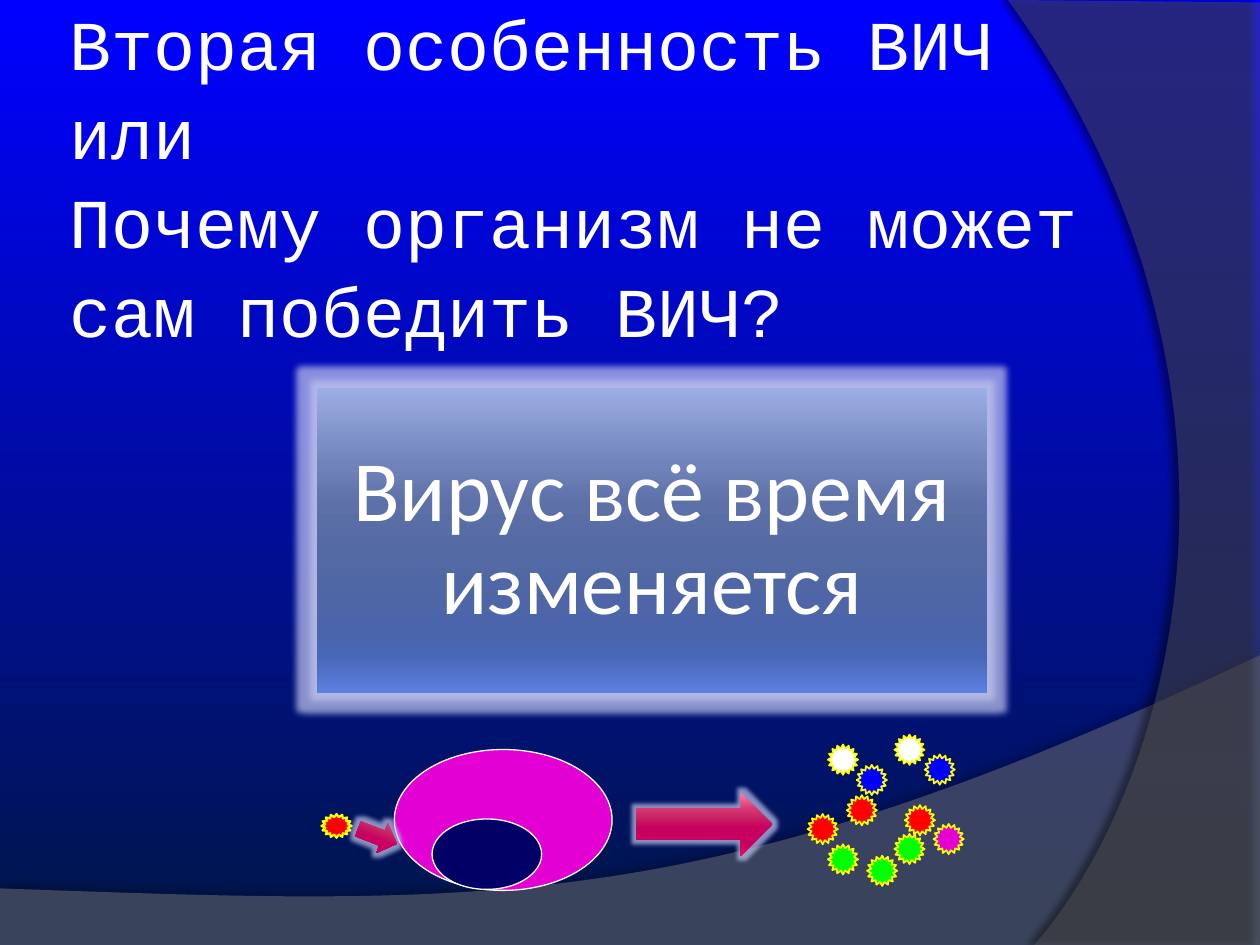
"""Build a slide on why the body cannot defeat HIV: the virus keeps changing."""
from copy import deepcopy

from lxml import etree
from pptx import Presentation
from pptx.dml.color import RGBColor
from pptx.enum.shapes import MSO_SHAPE
from pptx.enum.text import MSO_ANCHOR, MSO_AUTO_SIZE, PP_ALIGN
from pptx.oxml.ns import qn
from pptx.util import Cm, Pt

RECTANGLE, OVAL = MSO_SHAPE.RECTANGLE, MSO_SHAPE.OVAL
STAR, ARROW = MSO_SHAPE.STAR_16_POINT, MSO_SHAPE.RIGHT_ARROW
MIDDLE, NO_FIT = MSO_ANCHOR.MIDDLE, MSO_AUTO_SIZE.NONE
LEFT, CENTER = PP_ALIGN.LEFT, PP_ALIGN.CENTER

WHITE = RGBColor(0xFF, 0xFF, 0xFF)
BLACK = RGBColor(0, 0, 0)
RED = RGBColor(0xFF, 0, 0)
GREEN = RGBColor(0, 0xFF, 0)
BLUE = RGBColor(0, 0, 0xFF)
YELLOW = RGBColor(0xFF, 0xFF, 0)
MAGENTA = RGBColor(0xE2, 0, 0xD2)
NAVY = RGBColor(0, 0, 0x66)
NIGHT = RGBColor(0, 0x17, 0x46)
GREY = RGBColor(0x7F, 0x7F, 0x7F)
DARK_GREY = RGBColor(0x5E, 0x5E, 0x5E)
LILAC = RGBColor(0xC4, 0xC8, 0xF0)

POSITIONS = (0, 25, 38, 55, 80, 88, 100)
STEEL = list(zip(POSITIONS, map(RGBColor.from_string, (
    "9DADE5", "7083BA", "5D70A7", "5369A3", "4B64AA", "4967B8", "5D80DF"))))
CRIMSON = list(zip(POSITIONS, map(RGBColor.from_string, (
    "FF82A5", "D93776", "C82665", "C8005F", "C6005E", "D10063", "FF0A79"))))

VIRUS_SIZE = 0.61
NEW_VIRUSES = (
    (18.64, 15.21, BLUE), (18.03, 16.81, GREEN), (18.82, 16.61, MAGENTA),
    (18.24, 16.23, RED), (18.03, 14.81, WHITE), (17.27, 15.42, BLUE),
    (16.28, 16.41, RED), (16.69, 17.02, GREEN), (17.48, 17.25, GREEN),
    (16.69, 15.01, WHITE), (17.07, 16.03, RED),
)


def curve(start, first, second, end, steps=60):
    """Return points along a cubic curve."""
    points = []
    for step in range(steps + 1):
        t = step / steps
        weights = ((1 - t) ** 3, 3 * t * (1 - t) ** 2, 3 * t * t * (1 - t), t ** 3)
        corners = (start, first, second, end)
        points.append(tuple(sum(w * c[axis] for w, c in zip(weights, corners))
                            for axis in (0, 1)))
    return points


class SlideBuilder:
    """Hold the style and the current slide."""

    def __init__(self, page):
        self.page = page
        self.shapes = page.shapes

    def colour_node(self, parent, colour, opacity=100):
        """Append a colour with its opacity in percent."""
        node = etree.SubElement(parent, qn("a:srgbClr"), val=str(colour))
        if opacity < 100:
            etree.SubElement(node, qn("a:alpha"), val=str(opacity * 1000))

    def gradient(self, fill, element, stops):
        """Fill from top to bottom with the given stops."""
        fill.gradient()
        fill.gradient_angle = 270
        stop_list = next(element.iter(qn("a:gsLst")))
        for stop in list(stop_list):
            stop_list.remove(stop)
        for position, colour in stops:
            stop = etree.SubElement(stop_list, qn("a:gs"), pos=str(position * 1000))
            self.colour_node(stop, colour)

    def background(self, stops):
        """Fill the page with a gradient."""
        self.gradient(self.page.background.fill, self.page.element, stops)

    def effect(self, shape, tag, colour, opacity, **lengths):
        """Give a shape a glow or a shadow."""
        effects = next(shape.element.iter(qn("a:effectLst")))
        settings = {name: str(value) for name, value in lengths.items()}
        self.colour_node(etree.SubElement(effects, qn(tag), settings), colour, opacity)

    def wave(self, points, colour, opacity, direction):
        """Draw a translucent decorative outline with a shadow."""
        points = [(Cm(x), Cm(y)) for x, y in points]
        builder = self.shapes.build_freeform(*points[0])
        builder.add_line_segments(points[1:], close=True)
        shape = builder.convert_to_shape()
        shape.shadow.inherit = False
        shape.fill.solid()
        shape.fill.fore_color.rgb = colour
        tint = next(shape.element.spPr.iter(qn("a:srgbClr")))
        etree.SubElement(tint, qn("a:alpha"), val=str(opacity * 1000))
        shape.line.fill.background()
        self.effect(shape, "a:outerShdw", BLACK, opacity=40, blurRad=Pt(4),
                    dist=Pt(4), dir=direction * 60000)

    def shape(self, kind, left, top, width, height, fill, line=None, weight=1):
        """Draw a preset shape with a plain or gradient fill."""
        shape = self.shapes.add_shape(kind, Cm(left), Cm(top), Cm(width), Cm(height))
        shape.shadow.inherit = False
        if isinstance(fill, list):
            self.gradient(shape.fill, shape.element, fill)
        else:
            shape.fill.solid()
            shape.fill.fore_color.rgb = fill
        if line is None:
            shape.line.fill.background()
        else:
            shape.line.color.rgb = line
            shape.line.width = Pt(weight)
        return shape

    def glowing(self, kind, left, top, width, height, fill, radius):
        """Draw a gradient shape with a pale glow."""
        shape = self.shape(kind, left, top, width, height, fill)
        self.effect(shape, "a:glow", LILAC, opacity=70, rad=Pt(radius))
        return shape

    def virus(self, left, top, colour, height=VIRUS_SIZE, weight=1):
        """Draw a spiky virus."""
        star = self.shape(STAR, left, top, VIRUS_SIZE, height, colour, YELLOW, weight)
        star.adjustments[0] = 0.375

    def caption(self, shape, text, font, size, align, spacing, inset):
        """Put white text into a shape."""
        frame = shape.text_frame
        frame.text = text
        frame.word_wrap = True
        frame.auto_size = NO_FIT
        frame.vertical_anchor = MIDDLE
        frame.margin_left = frame.margin_right = Cm(inset)
        frame.margin_top = frame.margin_bottom = Cm(inset)
        para = frame.paragraphs[0]
        para.alignment = align
        para.line_spacing = spacing
        for span in para.runs:
            span.font.name = font
            span.font.size = Pt(size)
            span.font.color.rgb = WHITE
        properties = next(shape.element.iter(qn("a:rPr")))
        for line_break in shape.element.iter(qn("a:br")):
            line_break.append(deepcopy(properties))

    def title(self, text):
        """Place and format the title."""
        box = self.page.shapes.title
        box.left, box.top, box.width, box.height = Cm(1.27), Cm(1.9), Cm(22.86), Cm(3.18)
        self.caption(box, text, "Courier New", 40, LEFT, 1.06, 0.13)

    def group(self):
        """Draw the following shapes inside a new group."""
        self.shapes = self.page.shapes.add_group_shape().shapes


def main():
    """Build and save the deck."""
    deck = Presentation()
    deck.slide_width, deck.slide_height = Cm(25.4), Cm(19.05)
    slide = SlideBuilder(deck.slides.add_slide(deck.slide_layouts[5]))

    slide.background([(0, BLUE), (1, BLUE), (100, NIGHT)])
    slide.wave([(0, 19.05), (25.4, 19.05)]
               + curve((25.4, 13.21), (14.2, 18.52), (9.93, 18.26), (0, 17.91)),
               GREY, 45, 270)
    slide.wave([(25.4, 0.05), (25.4, 19.05)]
               + curve((20.85, 19.05), (23.75, 15.72), (25.86, 7.62), (20.32, 0)),
               DARK_GREY, 40, 180)
    slide.title("Вторая особенность ВИЧ\vили\vПочему организм не может\vсам победить ВИЧ?")

    panel = slide.glowing(RECTANGLE, 6.4, 7.82, 13.49, 6.15, STEEL, 8)
    slide.caption(panel, "Вирус всё время изменяется", "Calibri", 49, CENTER, 0.9, 0.51)

    slide.group()
    slide.shape(OVAL, 7.95, 15.11, 4.39, 2.84, MAGENTA, WHITE, 0.75)
    slide.shape(OVAL, 8.71, 16.51, 2.21, 1.42, NAVY, WHITE, 0.75)
    slide.virus(6.48, 16.41, RED, height=0.48, weight=1.25)
    slide.glowing(ARROW, 12.83, 15.98, 2.74, 1.27, CRIMSON, 5)
    entry = slide.glowing(ARROW, 7.19, 16.54, 0.84, 0.64, CRIMSON, 5)
    entry.rotation = 21.1
    for left, top, colour in NEW_VIRUSES:
        slide.virus(left, top, colour)

    deck.save("out.pptx")


if __name__ == "__main__":
    main()
